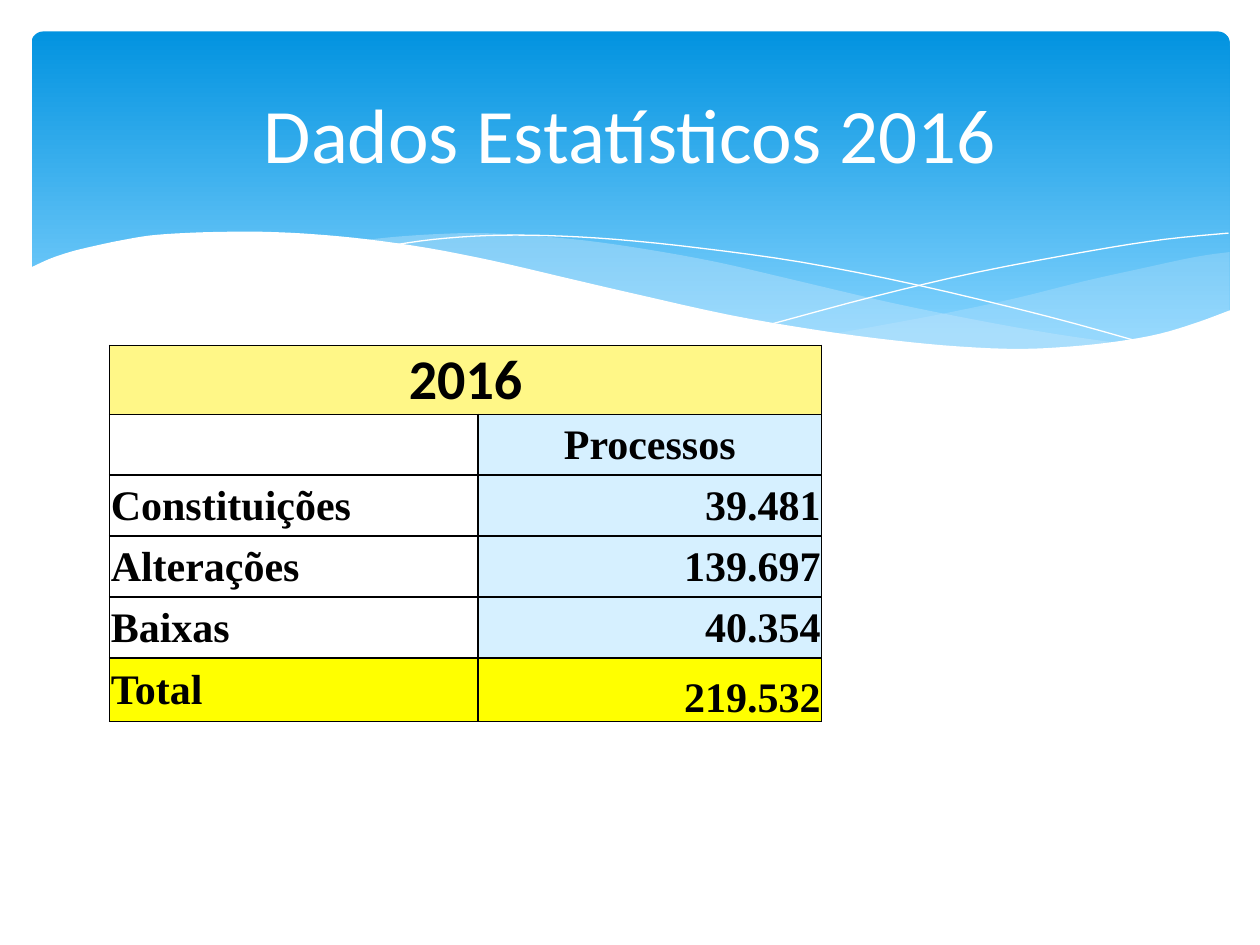
from lxml.etree import SubElement
from pptx import Presentation
from pptx.dml.color import RGBColor
from pptx.enum.shapes import MSO_SHAPE as SHAPE
from pptx.enum.text import MSO_ANCHOR as ANCHOR, PP_ALIGN as ALIGN
from pptx.oxml.ns import qn
from pptx.util import Pt

COLORS = {
    "sky": "0293E0", "light_sky": "83D3FE", "mist": "C6E7FC", "white": "FFFFFF",
    "black": "000000", "cream": "FFF787", "pale": "D6F0FF", "yellow": "FFFF00",
}
TITLE_FONT = {"name": "Calibri", "size": Pt(44), "bold": False}
YEAR_FONT = {"name": "Calibri", "size": Pt(32), "bold": True}
BODY_FONT = {"name": "Times New Roman", "size": Pt(24), "bold": True}
MARGINS = {"margin_left": Pt(0.72), "margin_right": Pt(0.72),
           "margin_top": Pt(0.72), "margin_bottom": Pt(0)}

RIGHT_BAND = [
    [(702.7, 144), (682.6, 146.9), (652.3, 153.4), (619.9, 160.6), (579.6, 170.6),
     (542.2, 178.6), (508.3, 185), (475.9, 190.8)],
    [(475.9, 190.8), (507.6, 195.1), (536.4, 198), (562.3, 199.4), (586.1, 200.2),
     (607.7, 199.4), (634.3, 197.3), (657.4, 193), (678.2, 186.5), (702.7, 177.8)],
]
CENTRE_BAND = [
    [(643, 196.6), (602.6, 190.8), (558, 182.9), (508.3, 172.8), (452.9, 159.8),
     (409.7, 149.8), (370.1, 142.6), (334.8, 137.5), (302.4, 134.6), (273.6, 133.2),
     (247.7, 133.9), (225.4, 135.4), (205.9, 137.5)],
    [(205.9, 137.5), (246.2, 143.3), (290.9, 151.9), (323.3, 159.8), (381.6, 172.8),
     (432.7, 183.6), (478.8, 191.5), (519.8, 197.3), (556.6, 199.4), (589, 200.2),
     (617, 199.4), (643, 196.6)],
]
FALLING_LINE = [(222.5, 140.4), (247.7, 136.8), (278.6, 134.6), (311.8, 134.6),
                (352.1, 136.8), (400.3, 141.8), (457.9, 149.8), (523.4, 162.7),
                (598.3, 180.7), (653, 195.8)]
RISING_LINE = [(441.4, 185), (500.4, 169.2), (558.7, 155.5), (623.5, 143.3),
               (665.3, 136.8), (702, 133.2)]
WAVE = [
    [(703.4, 177.1), (684, 184.3), (662.4, 190.8), (638.6, 195.1), (612, 198),
     (582.5, 199.4), (547.9, 198), (509.8, 194.4), (466.6, 188.6), (416.9, 180),
     (362.2, 167.8), (321.8, 158.4), (281.5, 149), (244.8, 141.8), (210.2, 136.8),
     (180, 133.9), (151.9, 132.5), (127.4, 132.5), (105.1, 133.2), (85.7, 134.6),
     (68.4, 137.5), (54.7, 140.4), (42.5, 143.3), (33.1, 146.2), (25.9, 149),
     (16.6, 153.4)],
    [(16.6, 236.9), (703.4, 236.9)],
]
ROWS = [("Constituições", "39.481"), ("Alterações", "139.697"), ("Baixas", "40.354")]


def rgb(name):
    """Return the named colour."""
    return RGBColor.from_string(COLORS[name])


def apply(target, values):
    """Set each attribute in values on target."""
    for key, value in values.items():
        setattr(target, key, value)


def smooth(points, steps=4):
    """Return the points joined by a Catmull-Rom curve."""
    ends = [points[0], *points, points[-1]]
    curve = []
    for a, b, c, d in zip(ends, ends[1:], ends[2:], ends[3:]):
        for t in (i / steps for i in range(steps)):
            curve.append(tuple(
                (2 * q + (r - p) * t + (2 * p - 5 * q + 4 * r - s) * t ** 2
                 + (3 * q - p - 3 * r + s) * t ** 3) / 2
                for p, q, r, s in zip(a, b, c, d)))
    return curve + [points[-1]]


def write(tf, text, font, color, align):
    """Write one formatted paragraph in a text frame."""
    p = tf.paragraphs[0]
    p.alignment = align
    r = p.add_run()
    r.text = text
    apply(r.font, font)
    r.font.color.rgb = rgb(color)


def add_outline(s, edges, closed):
    """Add a freeform that follows the smoothed edges."""
    points = [(Pt(x), Pt(y)) for edge in edges for x, y in smooth(edge)]
    builder = s.shapes.build_freeform(*points[0])
    builder.add_line_segments(points[1:], close=closed)
    sp = builder.convert_to_shape()
    sp.shadow.inherit = False
    return sp


def add_area(s, edges, color, opacity=100):
    """Add a filled freeform without a line."""
    sp = add_outline(s, edges, True)
    sp.fill.solid()
    sp.fill.fore_color.rgb = rgb(color)
    sp.line.fill.background()
    if opacity < 100:
        clr = sp.fill._xPr.find(qn("a:solidFill"))[0]
        SubElement(clr, qn("a:alpha"), val=str(opacity * 1000))


def add_curve(s, points):
    """Add a white hairline curve."""
    sp = add_outline(s, [points], False)
    sp.fill.background()
    sp.line.color.rgb = rgb("white")
    sp.line.width = Pt(0)


def add_banner(s):
    """Add the rounded gradient banner."""
    sp = s.shapes.add_shape(SHAPE.ROUNDED_RECTANGLE, Pt(18), Pt(18), Pt(684.7), Pt(194.4))
    sp.adjustments[0] = 0.034
    sp.shadow.inherit = False
    sp.line.fill.background()
    sp.fill.gradient()
    sp.fill.gradient_angle = 270
    for stop, color, position in zip(sp.fill.gradient_stops, ("sky", "light_sky"), (0, 0.9)):
        stop.color.rgb = rgb(color)
        stop.position = position


def add_title(s, text):
    """Add the slide title."""
    tf = s.shapes.add_textbox(Pt(36), Pt(26.6), Pt(648), Pt(98.6)).text_frame
    apply(tf, {"word_wrap": True, "vertical_anchor": ANCHOR.MIDDLE})
    write(tf, text, TITLE_FONT, "white", ALIGN.CENTER)


def format_cell(cell, text="", fill=None, font=BODY_FONT, align=ALIGN.LEFT, anchor=ANCHOR.MIDDLE):
    """Fill, border and write one table cell."""
    apply(cell, {**MARGINS, "vertical_anchor": anchor})
    tc_pr = cell._tc.get_or_add_tcPr()
    for side in ("lnL", "lnR", "lnT", "lnB"):
        ln = SubElement(tc_pr, qn(f"a:{side}"), w=str(Pt(1)))
        solid = SubElement(ln, qn("a:solidFill"))
        SubElement(solid, qn("a:srgbClr"), val=COLORS["black"])
    if fill:
        cell.fill.solid()
        cell.fill.fore_color.rgb = rgb(fill)
    else:
        cell.fill.background()
    if text:
        write(cell.text_frame, text, font, "black", align)


def add_statistics(s):
    """Add the table of process counts."""
    table = s.shapes.add_table(6, 2, Pt(62.6), Pt(197.3), Pt(407), Pt(214.8)).table
    apply(table, {"first_row": False, "horz_banding": False})
    for column, width in zip(table.columns, (210.5, 196.5)):
        column.width = Pt(width)
    for row, height in zip(table.rows, (39.5, *[34.8] * 4, 36.5)):
        row.height = Pt(height)
    for column in range(2):
        format_cell(table.cell(0, column), fill="cream")
    table.cell(0, 0).merge(table.cell(0, 1))
    write(table.cell(0, 0).text_frame, "2016", YEAR_FONT, "black", ALIGN.CENTER)
    format_cell(table.cell(1, 0))
    format_cell(table.cell(1, 1), "Processos", "pale", align=ALIGN.CENTER)
    for i, (label, value) in enumerate(ROWS, 2):
        format_cell(table.cell(i, 0), label)
        format_cell(table.cell(i, 1), value, "pale", align=ALIGN.RIGHT)
    format_cell(table.cell(5, 0), "Total", "yellow")
    format_cell(table.cell(5, 1), "219.532", "yellow", align=ALIGN.RIGHT, anchor=ANCHOR.BOTTOM)


def main():
    """Build and save the slide."""
    prs = Presentation()
    apply(prs, {"slide_width": Pt(720), "slide_height": Pt(540)})
    s = prs.slides.add_slide(prs.slide_layouts[6])
    add_banner(s)
    add_area(s, RIGHT_BAND, "mist", 29)
    add_area(s, CENTRE_BAND, "mist", 40)
    add_curve(s, FALLING_LINE)
    add_curve(s, RISING_LINE)
    add_area(s, WAVE, "white")
    add_title(s, "Dados Estatísticos 2016")
    add_statistics(s)
    prs.save("out.pptx")


if __name__ == "__main__":
    main()
